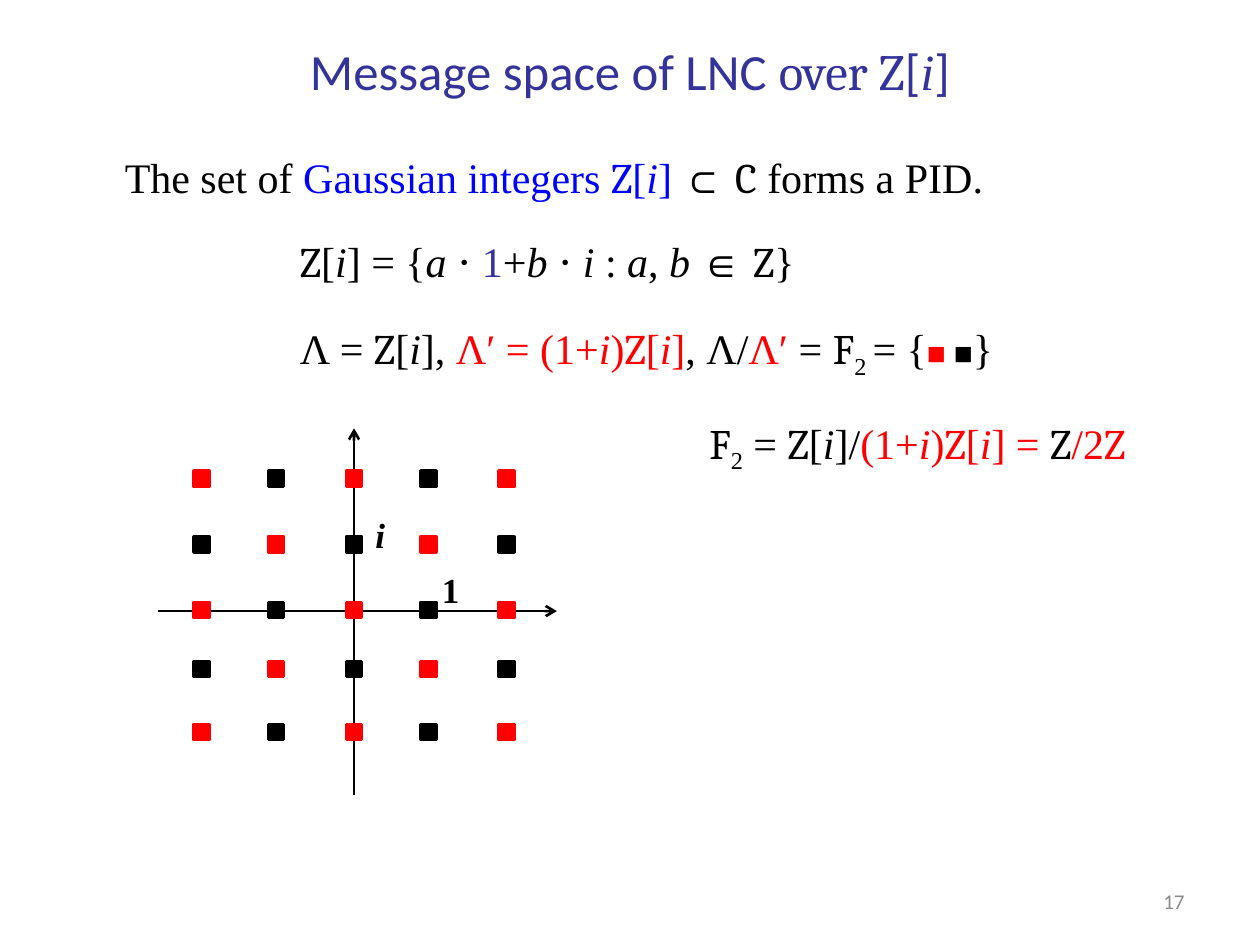
"""Builds the slide on the message space of LNC over the Gaussian integers."""
from dataclasses import dataclass
from typing import Optional

from lxml import etree
from pptx import Presentation
from pptx import util as u
from pptx.dml.color import RGBColor
from pptx.enum import shapes, text
from pptx.oxml import ns


@dataclass(frozen=True)
class Theme:
    navy: str = "333399"
    blue: str = "0000FF"
    red: str = "FF0000"
    black: str = "000000"
    grey: str = "898989"
    sans: str = "Calibri"
    serif: str = "Times New Roman"
    sets: str = "Cambria"
    title: int = 29
    body: int = 24
    label: int = 20
    square: int = 18
    number: int = 12


THEME = Theme()


@dataclass(frozen=True)
class Span:
    text: str
    color: str = THEME.black
    font: str = THEME.serif
    size: int = THEME.body
    italic: bool = False
    bold: bool = False
    subscript: bool = False


@dataclass(frozen=True)
class Line:
    spans: list[Span]
    indent: float
    spacing: float = 1.5


@dataclass(frozen=True)
class Box:
    left: float
    top: float
    width: float
    height: float


@dataclass(frozen=True)
class Label:
    box: Box
    span: Span
    align: Optional[text.PP_ALIGN] = None
    wrap: bool = False
    anchor: text.MSO_ANCHOR = text.MSO_ANCHOR.TOP


def italic(words: str, color: str = THEME.black) -> Span:
    return Span(words, color, italic=True)


def number_set(letter: str, color: str = THEME.black) -> Span:
    return Span(letter, color, THEME.sets)


def gaussian(color: str = THEME.black, end: str = "]") -> list[Span]:
    return [number_set("Z", color), Span("[", color), italic("i", color), Span(end, color)]


def ideal(start: str, end: str = "]") -> list[Span]:
    red = THEME.red
    return [Span(start + "(1+", red), italic("i", red), Span(")", red), *gaussian(red, end)]


def field(index: str) -> list[Span]:
    return [number_set("F"), Span(index, subscript=True)]


TITLE = [
    Span("Message space of LNC ", THEME.navy, THEME.sans, THEME.title),
    Span("over Z", THEME.navy, THEME.sets, THEME.title),
    Span("[", THEME.navy, THEME.sans, THEME.title),
    Span("i", THEME.navy, THEME.serif, THEME.title, italic=True),
    Span("]", THEME.navy, THEME.sans, THEME.title),
]
LINES = [
    Line([Span("The set of "), Span("Gaussian integers ", THEME.blue),
          *gaussian(THEME.blue, "] "), Span("⊂ "), number_set("C"),
          Span(" forms a PID.")], 0, 1.2),
    Line([*gaussian(end="] = {"), italic("a ⋅ "), Span("1", THEME.navy), Span("+"),
          italic("b ⋅ i "), Span(": "), italic("a"), Span(", "), italic("b"),
          Span(" ∈ "), number_set("Z"), Span("}")], 1.39),
    Line([Span("Λ = "), *gaussian(end="], "), *ideal("Λ′ = "), Span(", Λ/"),
          Span("Λ′", THEME.red), Span(" = "), *field("2 "), Span("= {"),
          Span("■ ", THEME.red, size=THEME.square), Span("■", size=THEME.square),
          Span("}")], 1.39),
    Line([*field("2"), Span(" = "), *gaussian(end="]/"), *ideal("", "] = "),
          number_set("Z"), Span("/2", THEME.red), number_set("Z", THEME.red)], 4.64),
]
LABELS = [
    Label(Box(3.41, 4.46, 0.34, 0.44), Span("1", size=THEME.label, bold=True)),
    Label(Box(2.88, 4.03, 0.28, 0.44), Span("i", size=THEME.label, italic=True, bold=True)),
    Label(Box(7.28, 6.95, 2.22, 0.4), Span("17", THEME.grey, THEME.sans, THEME.number),
          text.PP_ALIGN.RIGHT, True, text.MSO_ANCHOR.MIDDLE),
]
COLUMNS = (1.54, 2.13, 2.75, 3.34, 3.96)
ROWS = (3.74, 4.26, 4.78, 5.25, 5.75)
POINT_SIZE = 0.12


def place(shape, box: Box) -> None:
    shape.left, shape.top = u.Inches(box.left), u.Inches(box.top)
    shape.width, shape.height = u.Inches(box.width), u.Inches(box.height)


def write(paragraph, spans: list[Span]) -> None:
    for span in spans:
        run = paragraph.add_run()
        run.text = span.text
        font = run.font
        font.name, font.size = span.font, u.Pt(span.size)
        font.italic, font.bold = span.italic, span.bold
        font.color.rgb = RGBColor.from_string(span.color)
        if span.subscript:
            run._r.get_or_add_rPr().set("baseline", "-25000")


def add_title(page) -> None:
    title = page.shapes.title
    place(title, Box(0.5, 0.13, 9, 0.85))
    frame = title.text_frame
    frame.auto_size = text.MSO_AUTO_SIZE.NONE
    frame.vertical_anchor = text.MSO_ANCHOR.MIDDLE
    frame.paragraphs[0].alignment = text.PP_ALIGN.CENTER
    write(frame.paragraphs[0], TITLE)


def add_body(page) -> None:
    body = page.placeholders[1]
    place(body, Box(0.89, 1.07, 8.61, 2.78))
    frame = body.text_frame
    frame.auto_size = text.MSO_AUTO_SIZE.NONE
    for index, line in enumerate(LINES):
        paragraph = frame.add_paragraph() if index else frame.paragraphs[0]
        paragraph.level = 1 if index else 0
        paragraph.line_spacing = line.spacing
        paragraph.space_before = u.Pt(0.2 * THEME.body)
        properties = paragraph._p.get_or_add_pPr()
        properties.set("marL", str(u.Inches(line.indent)))
        properties.set("indent", "0")
        etree.SubElement(properties, ns.qn("a:buNone"))
        write(paragraph, line.spans)


def add_axis(page, start: tuple[float, float], end: tuple[float, float]) -> None:
    axis = page.shapes.add_connector(
        shapes.MSO_CONNECTOR.STRAIGHT, *map(u.Inches, start + end))
    axis.line.color.rgb = RGBColor.from_string(THEME.black)
    axis.line.width = u.Pt(1.5)
    etree.SubElement(axis.line._get_or_add_ln(), ns.qn("a:tailEnd"), type="arrow")
    etree.SubElement(axis._element.spPr, ns.qn("a:effectLst"))


def add_point(page, left: float, top: float, color: str) -> None:
    point = page.shapes.add_shape(
        shapes.MSO_SHAPE.FLOWCHART_PROCESS,
        *map(u.Inches, (left, top, POINT_SIZE, POINT_SIZE)))
    point.shadow.inherit = False
    point.fill.solid()
    point.fill.fore_color.rgb = point.line.color.rgb = RGBColor.from_string(color)
    point.line.width = u.Pt(2)


def add_label(page, label: Label) -> None:
    box = page.shapes.add_textbox(0, 0, 0, 0)
    place(box, label.box)
    frame = box.text_frame
    frame.word_wrap = label.wrap
    frame.vertical_anchor = label.anchor
    if not label.wrap:
        frame.auto_size = text.MSO_AUTO_SIZE.SHAPE_TO_FIT_TEXT
    frame.paragraphs[0].alignment = label.align
    write(frame.paragraphs[0], [label.span])


def main() -> None:
    deck = Presentation()
    deck.slide_width, deck.slide_height = u.Inches(10), u.Inches(7.5)
    page = deck.slides.add_slide(deck.slide_layouts[1])
    add_title(page)
    add_body(page)
    add_axis(page, (2.81, 6.31), (2.81, 3.4))
    add_axis(page, (1.25, 4.85), (4.42, 4.85))
    for row, top in enumerate(ROWS):
        for column, left in enumerate(COLUMNS):
            add_point(page, left, top, THEME.black if (row + column) % 2 else THEME.red)
    for label in LABELS:
        add_label(page, label)
    deck.save("out.pptx")


if __name__ == "__main__":
    main()
